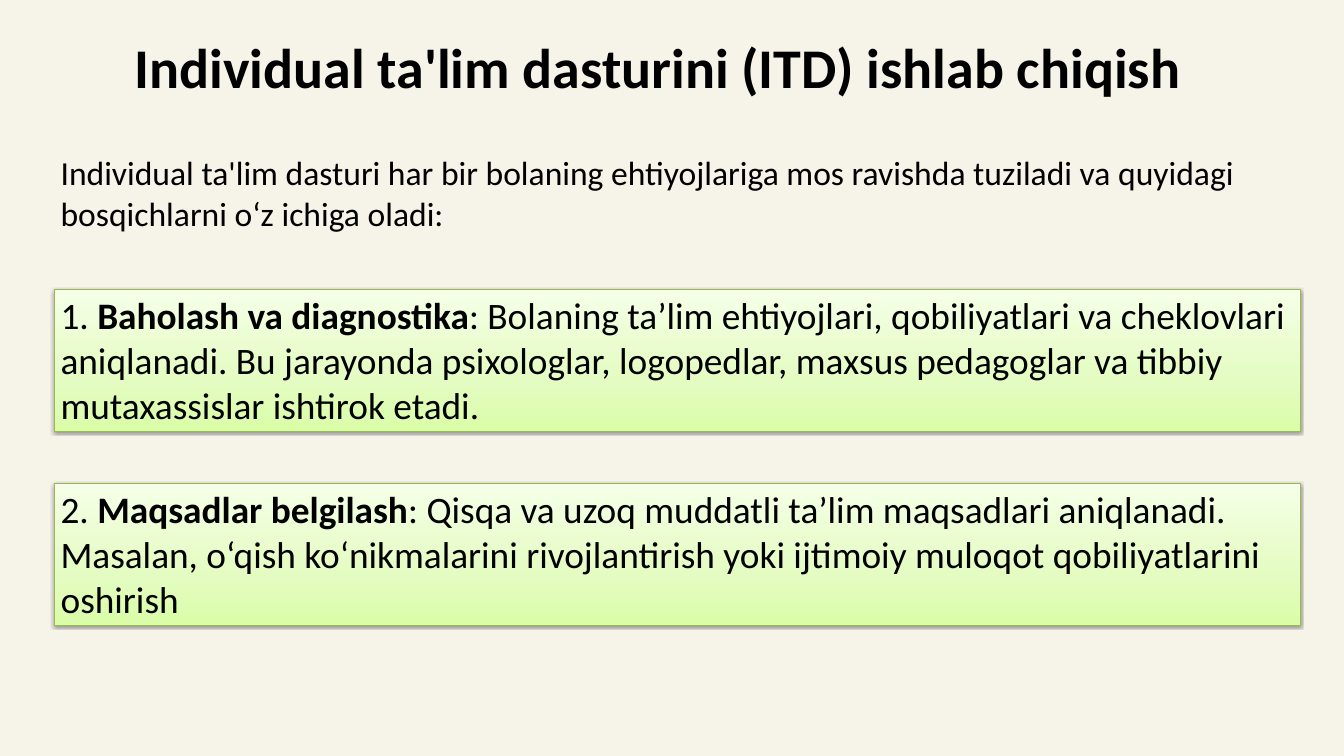
"""Build the slide on drawing up an individual education plan."""
from copy import deepcopy
from dataclasses import dataclass

from lxml import etree
from pptx import Presentation
from pptx import util as u
from pptx.dml.color import RGBColor
from pptx.enum import shapes, text
from pptx.oxml import ns

TITLE = "Individual ta'lim dasturini (ITD) ishlab chiqish"
INTRO = (
    "Individual ta'lim dasturi har bir bolaning ehtiyojlariga mos ravishda "
    "tuziladi va quyidagi bosqichlarni o‘z ichiga oladi:"
)
STEPS = [
    (
        "Baholash va diagnostika",
        "Bolaning ta’lim ehtiyojlari, qobiliyatlari va cheklovlari aniqlanadi. "
        "Bu jarayonda psixologlar, logopedlar, maxsus pedagoglar va tibbiy "
        "mutaxassislar ishtirok etadi.",
    ),
    (
        "Maqsadlar belgilash",
        "Qisqa va uzoq muddatli ta’lim maqsadlari aniqlanadi. Masalan, o‘qish "
        "ko‘nikmalarini rivojlantirish yoki ijtimoiy muloqot qobiliyatlarini "
        "oshirish",
    ),
]


@dataclass(frozen=True)
class Theme:
    font: str = "Calibri"
    back: str = "F6F3E9"
    ink: str = "000000"
    edge: str = "98B955"
    fade: tuple = ((0, "DAFDA7"), (0.35, "E4FCC2"), (1, "F5FFE7"))
    title: int = 60
    intro: int = 36
    step: int = 40


LOOK = Theme()
WIDE, HIGH = 1344, 756
LEFT, SPAN = 54, 1246
STEP_TOP, STEP_HIGH, STEP_GAP = 289, 142, 52


def px(count):
    return u.Emu(round(count * 914400 / 67.2))


def tint(code):
    return RGBColor.from_string(code)


def write(shape, parts, size):
    frame = shape.text_frame
    frame.word_wrap = True
    frame.vertical_anchor = text.MSO_ANCHOR.TOP
    para = frame.paragraphs[0]
    para.alignment = text.PP_ALIGN.LEFT
    for words, bold in parts:
        run = para.add_run()
        run.text = words
        run.font.name = LOOK.font
        run.font.size = u.Pt(size)
        run.font.bold = bold
        run.font.color.rgb = tint(LOOK.ink)
    return para


def add_text(slide, box, words, size, bold=False):
    shape = slide.shapes.add_textbox(*map(px, box))
    return shape.text_frame, write(shape, [(words, bold)], size)


def paint(shape):
    shape.fill.gradient()
    shape.fill.gradient_angle = 90
    stops = shape._element.spPr.find(".//" + ns.qn("a:gsLst"))
    stops.insert(1, deepcopy(stops[0]))
    for stop, (place, code) in zip(shape.fill.gradient_stops, LOOK.fade):
        stop.position = place
        stop.color.rgb = tint(code)
    shape.line.color.rgb = tint(LOOK.edge)
    shape.line.width = u.Pt(0.75)


def shade(shape):
    shape.shadow.inherit = False
    effects = shape._element.spPr.find(ns.qn("a:effectLst"))
    outer = etree.SubElement(
        effects, ns.qn("a:outerShdw"), blurRad=str(u.Pt(3.1)),
        dist=str(u.Pt(1.6)), dir="5400000", rotWithShape="0",
    )
    color = etree.SubElement(outer, ns.qn("a:srgbClr"), val=LOOK.ink)
    etree.SubElement(color, ns.qn("a:alpha"), val="38000")


def add_step(slide, index, name, words):
    top = STEP_TOP + index * (STEP_HIGH + STEP_GAP)
    shape = slide.shapes.add_shape(
        shapes.MSO_SHAPE.RECTANGLE, *map(px, (LEFT, top, SPAN, STEP_HIGH))
    )
    paint(shape)
    shade(shape)
    parts = [(f"{index + 1}. ", False), (name, True), (f": {words}", False)]
    write(shape, parts, LOOK.step)


def main():
    deck = Presentation()
    deck.slide_width, deck.slide_height = px(WIDE), px(HIGH)
    slide = deck.slides.add_slide(deck.slide_layouts[6])
    slide.background.fill.solid()
    slide.background.fill.fore_color.rgb = tint(LOOK.back)

    frame, para = add_text(slide, (101, 27, 1141, 70), TITLE, LOOK.title, True)
    frame.margin_left = frame.margin_top = frame.margin_bottom = 0
    frame.margin_right = px(27)
    para.alignment = text.PP_ALIGN.CENTER
    para.line_spacing = u.Pt(78.4)

    add_text(slide, (LEFT, 149, SPAN, 88), INTRO, LOOK.intro)
    for index, (name, words) in enumerate(STEPS):
        add_step(slide, index, name, words)
    deck.save("out.pptx")


if __name__ == "__main__":
    main()
